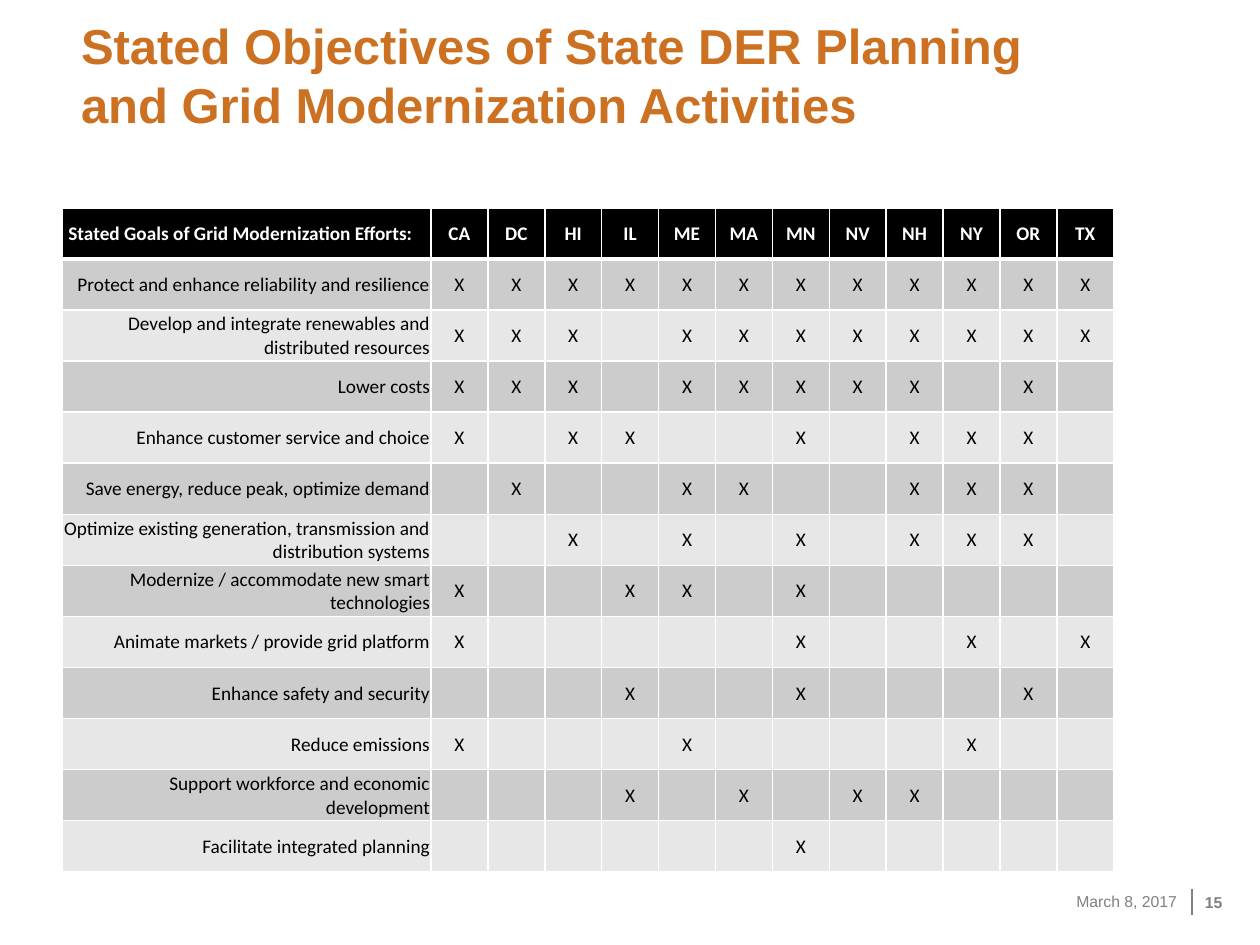
from lxml.etree import SubElement
from pptx import Presentation
from pptx.dml.color import RGBColor
from pptx.enum.shapes import MSO_CONNECTOR
from pptx.enum.text import MSO_ANCHOR, PP_ALIGN
from pptx.oxml.ns import qn
from pptx.util import Emu, Pt

PX = 914400 / 126
COLORS = {"title": "CC7022", "footer": "808080", "head": "000000", "rule": "FFFFFF",
          "head_text": "FFFFFF", "text": "000000", "odd": "CCCCCC", "even": "E7E7E7"}

STATES = "CA DC HI IL ME MA MN NV NH NY OR TX".split()
GOALS = [
    ("Protect and enhance reliability and resilience", "CA DC HI IL ME MA MN NV NH NY OR TX"),
    ("Develop and integrate renewables and distributed resources",
     "CA DC HI ME MA MN NV NH NY OR TX"),
    ("Lower costs", "CA DC HI ME MA MN NV NH OR"),
    ("Enhance customer service and choice", "CA HI IL MN NH NY OR"),
    ("Save energy, reduce peak, optimize demand", "DC ME MA NH NY OR"),
    ("Optimize existing generation, transmission and distribution systems",
     "HI ME MN NH NY OR"),
    ("Modernize / accommodate new smart technologies", "CA IL ME MN"),
    ("Animate markets / provide grid platform", "CA MN NY TX"),
    ("Enhance safety and security", "IL MN OR"),
    ("Reduce emissions", "CA ME NY"),
    ("Support workforce and economic development", "IL MA NV NH"),
    ("Facilitate integrated planning", "MN"),
]


def px(n):
    return Emu(round(n * PX))


def rgb(name):
    return RGBColor.from_string(COLORS[name])


def style(p, size, color, bold=False, font="Arial", align=PP_ALIGN.LEFT):
    p.alignment = align
    for r in p.runs:
        r.font.size, r.font.name, r.font.bold = Pt(size), font, bold
        r.font.color.rgb = rgb(color)


def add_text(s, box, text, size, color, anchor, margins, **kw):
    tf = s.shapes.add_textbox(*map(px, box)).text_frame
    tf.word_wrap = True
    tf.vertical_anchor = anchor
    tf.margin_left, tf.margin_top, tf.margin_right, tf.margin_bottom = map(px, margins)
    tf.text = text
    style(tf.paragraphs[0], size, color, **kw)


def set_borders(cell, bottom):
    """White rules on all four sides; they must precede the cell fill."""
    tc_pr = cell._tc.get_or_add_tcPr()
    for side, width in (("L", 1), ("R", 1), ("T", 1), ("B", bottom)):
        ln = SubElement(tc_pr, qn(f"a:ln{side}"), w=str(Pt(width)))
        fill = SubElement(ln, qn("a:solidFill"))
        SubElement(fill, qn("a:srgbClr"), val=COLORS["rule"])


def fill_cell(cell, text, fill, color, align, bold=False, bottom=1, right=1):
    set_borders(cell, bottom)
    cell.fill.solid()
    cell.fill.fore_color.rgb = rgb(fill)
    cell.vertical_anchor = MSO_ANCHOR.MIDDLE
    cell.margin_left = cell.margin_top = px(1)
    cell.margin_right, cell.margin_bottom = px(right), 0
    cell.text = text
    style(cell.text_frame.paragraphs[0], 11, color, bold, "Calibri", align)


def add_title(s, box):
    add_text(s, box, "Stated Objectives of State DER Planning and Grid Modernization Activities",
             28, "title", MSO_ANCHOR.BOTTOM, (13, 6, 13, 6), bold=True)


def add_goal_table(s, box, label_w):
    x, y, w, h = box
    rows, cols = len(GOALS) + 1, len(STATES) + 1
    table = s.shapes.add_table(rows, cols, px(x), px(y), px(w), px(h)).table
    table.columns[0].width = px(label_w)
    for c in range(1, cols):
        table.columns[c].width = px((w - label_w) / len(STATES))
    for row in table.rows:
        row.height = px(h / rows)

    # Header row; the wide right margin moves the first label left of centre
    for c, text in enumerate(["Stated Goals of Grid Modernization Efforts:"] + STATES):
        fill_cell(table.cell(0, c), text, "head", "head_text", PP_ALIGN.CENTER,
                  bold=True, bottom=3, right=1 if c else 13)

    # One row per goal, marked under each state that names it
    for i, (goal, named) in enumerate(GOALS, 1):
        fill = "odd" if i % 2 else "even"
        fill_cell(table.cell(i, 0), goal, fill, "text", PP_ALIGN.RIGHT)
        for c, state in enumerate(STATES, 1):
            mark = "X" if state in named.split() else ""
            fill_cell(table.cell(i, c), mark, fill, "text", PP_ALIGN.CENTER)


def add_footer(s, box):
    x, y, w, h = box
    # Date
    add_text(s, (x, y, 165, h), "March 8, 2017", 9, "footer", MSO_ANCHOR.MIDDLE,
             (0, 0, 0, 0), align=PP_ALIGN.RIGHT)
    # Divider
    line = s.shapes.add_connector(MSO_CONNECTOR.STRAIGHT, px(x + 180), px(y + 13),
                                  px(x + 180), px(y + 39))
    line.line.color.rgb = rgb("footer")
    line.line.width = Pt(1)
    SubElement(line._element.spPr, qn("a:effectLst"))
    # Page number
    add_text(s, (x + 193, y + 1, w - 193, h), "15", 9, "footer", MSO_ANCHOR.MIDDLE,
             (0, 0, 13, 0), bold=True)


def main():
    prs = Presentation()
    prs.slide_width, prs.slide_height = px(1260), px(945)
    s = prs.slides.add_slide(prs.slide_layouts[6])
    add_footer(s, (1012, 876, 224, 50))
    add_title(s, (68, 19, 1041, 120))
    add_goal_table(s, (62, 208, 1052, 664), label_w=369)
    prs.save("out.pptx")


if __name__ == "__main__":
    main()
